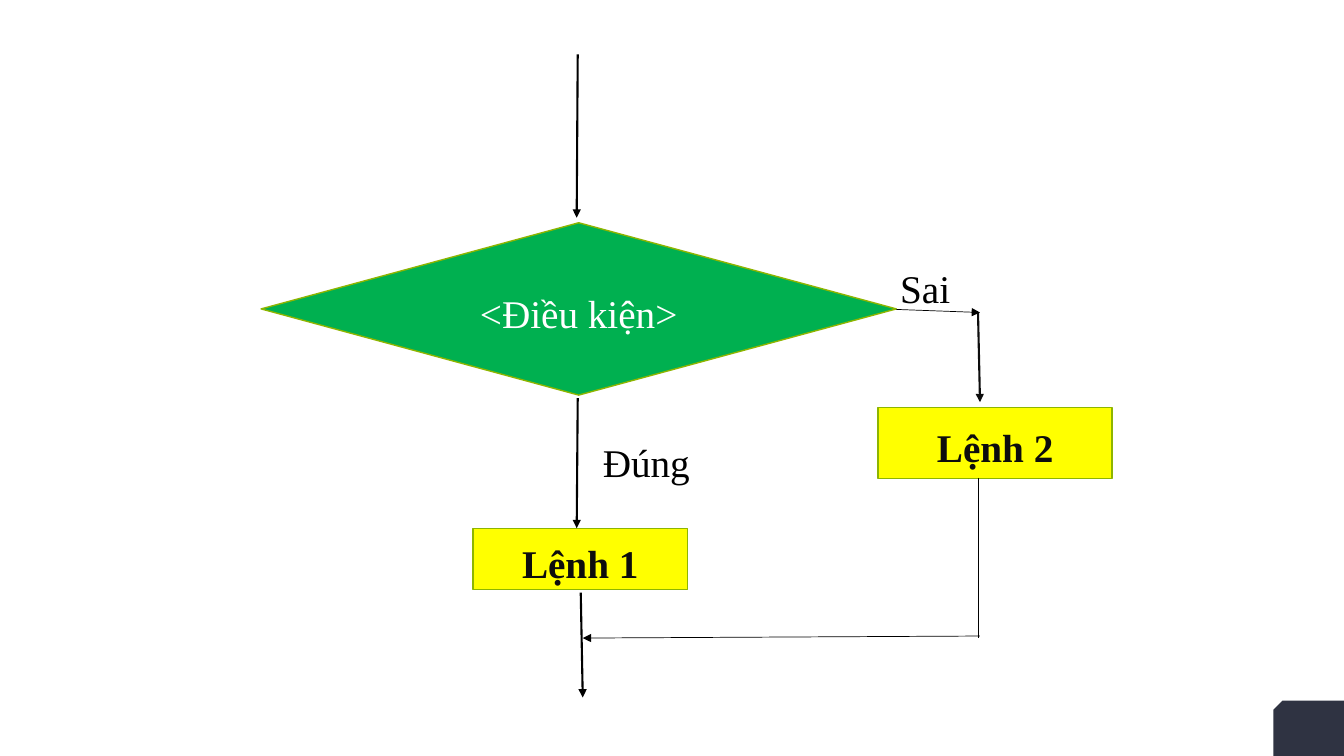
"""Build a slide with the flowchart of a two-branch conditional statement."""
import dataclasses
import typing

import pptx
import pptx.dml.color
import pptx.enum.shapes
import pptx.enum.text
import pptx.oxml.ns
import pptx.oxml.xmlchemy
import pptx.util

SHAPES = pptx.enum.shapes.MSO_SHAPE
ANCHOR = pptx.enum.text.MSO_ANCHOR
ALIGN = pptx.enum.text.PP_ALIGN
EMU_PER_PX = 9144
COLOURS = {
    "paper": "FFFFFF",
    "corner": "2F3342",
    "decision": "00B050",
    "command": "FFFF00",
    "border": "8EB500",
    "ink": "000000",
    "dark": "0D0D0D",
}


@dataclasses.dataclass(frozen=True)
class Block:
    left: int
    top: int
    width: int
    height: int
    fill: str
    text: str = ""
    ink: str = "ink"
    kind: SHAPES = SHAPES.RECTANGLE
    border: bool = False
    bold: bool = False
    centred: bool = False


@dataclasses.dataclass(frozen=True)
class Flow:
    start: tuple[int, int]
    end: tuple[int, int]
    weight: float = 1.5
    colour: str = "ink"
    arrow: bool = True


CORNER = Block(1263, 695, 70, 55, "corner", kind=SHAPES.SNIP_1_RECTANGLE)
BLOCKS = [
    Block(259, 221, 630, 171, "decision", "<Điều kiện>", "paper",
          SHAPES.FLOWCHART_DECISION, border=True, centred=True),
    Block(588, 423, 178, 55, "paper", "Đúng"),
    Block(469, 524, 213, 61, "command", "Lệnh 1", "dark", border=True, bold=True, centred=True),
    Block(871, 404, 232, 71, "command", "Lệnh 2", "dark", border=True, bold=True, centred=True),
    Block(883, 250, 130, 47, "paper", "Sai"),
]
FLOWS = [
    Flow((573, 54), (572, 216)),
    Flow((573, 395), (572, 524)),
    Flow((576, 588), (578, 692)),
    Flow((970, 310), (972, 399), colour="dark"),
    Flow((889, 307), (972, 310), weight=0.5),
    Flow((970, 474), (970, 633), weight=0.5, arrow=False),
    Flow((972, 631), (578, 633), weight=0.5),
]


def px(length: int) -> pptx.util.Emu:
    """Turn pixels into EMU."""
    return pptx.util.Emu(length * EMU_PER_PX)


def colour(name: str) -> pptx.dml.color.RGBColor:
    """Look up a colour by its name."""
    return pptx.dml.color.RGBColor.from_string(COLOURS[name])


def write_text(box: typing.Any, text: str, *, ink: str, bold: bool, centred: bool) -> None:
    """Write one formatted paragraph into a shape."""
    frame = box.text_frame
    frame.word_wrap = True
    frame.vertical_anchor = ANCHOR.MIDDLE if centred else ANCHOR.TOP
    para = frame.paragraphs[0]
    para.alignment = ALIGN.CENTER if centred else ALIGN.LEFT
    para.line_spacing = 1.15
    para.space_after = pptx.util.Pt(10)
    span = para.add_run()
    span.text = text
    span.font.name = "Times New Roman"
    span.font.size = pptx.util.Pt(28)
    span.font.bold = bold
    span.font.color.rgb = colour(ink)


def draw_block(page: typing.Any, block: Block) -> typing.Any:
    """Draw a filled shape with its text and border."""
    box = page.shapes.add_shape(
        block.kind, px(block.left), px(block.top), px(block.width), px(block.height))
    box.shadow.inherit = False
    box.fill.solid()
    box.fill.fore_color.rgb = colour(block.fill)
    if block.border:
        box.line.color.rgb = colour("border")
        box.line.width = pptx.util.Pt(1)
    else:
        box.line.fill.background()
    if block.text:
        write_text(box, block.text, ink=block.ink, bold=block.bold, centred=block.centred)
    return box


def draw_flow(page: typing.Any, flow: Flow) -> None:
    """Draw a straight line, with an arrowhead where the flow has one."""
    line = page.shapes.add_connector(
        pptx.enum.shapes.MSO_CONNECTOR.STRAIGHT, *map(px, flow.start + flow.end))
    line.line.color.rgb = colour(flow.colour)
    line.line.width = pptx.util.Pt(flow.weight)
    properties = line._element.spPr
    if flow.arrow:
        head = pptx.oxml.xmlchemy.OxmlElement("a:tailEnd")
        head.set("type", "triangle")
        properties.find(pptx.oxml.ns.qn("a:ln")).append(head)
    properties.append(pptx.oxml.xmlchemy.OxmlElement("a:effectLst"))


def main() -> None:
    """Build and save the deck."""
    deck = pptx.Presentation()
    deck.slide_width, deck.slide_height = px(1333), px(750)
    page = deck.slides.add_slide(deck.slide_layouts[6])
    page.background.fill.solid()
    page.background.fill.fore_color.rgb = colour("paper")
    corner = draw_block(page, CORNER)
    corner._element.spPr.find(pptx.oxml.ns.qn("a:xfrm")).set("flipH", "1")
    for block in BLOCKS:
        draw_block(page, block)
    for flow in FLOWS:
        draw_flow(page, flow)
    deck.save("out.pptx")


if __name__ == "__main__":
    main()
